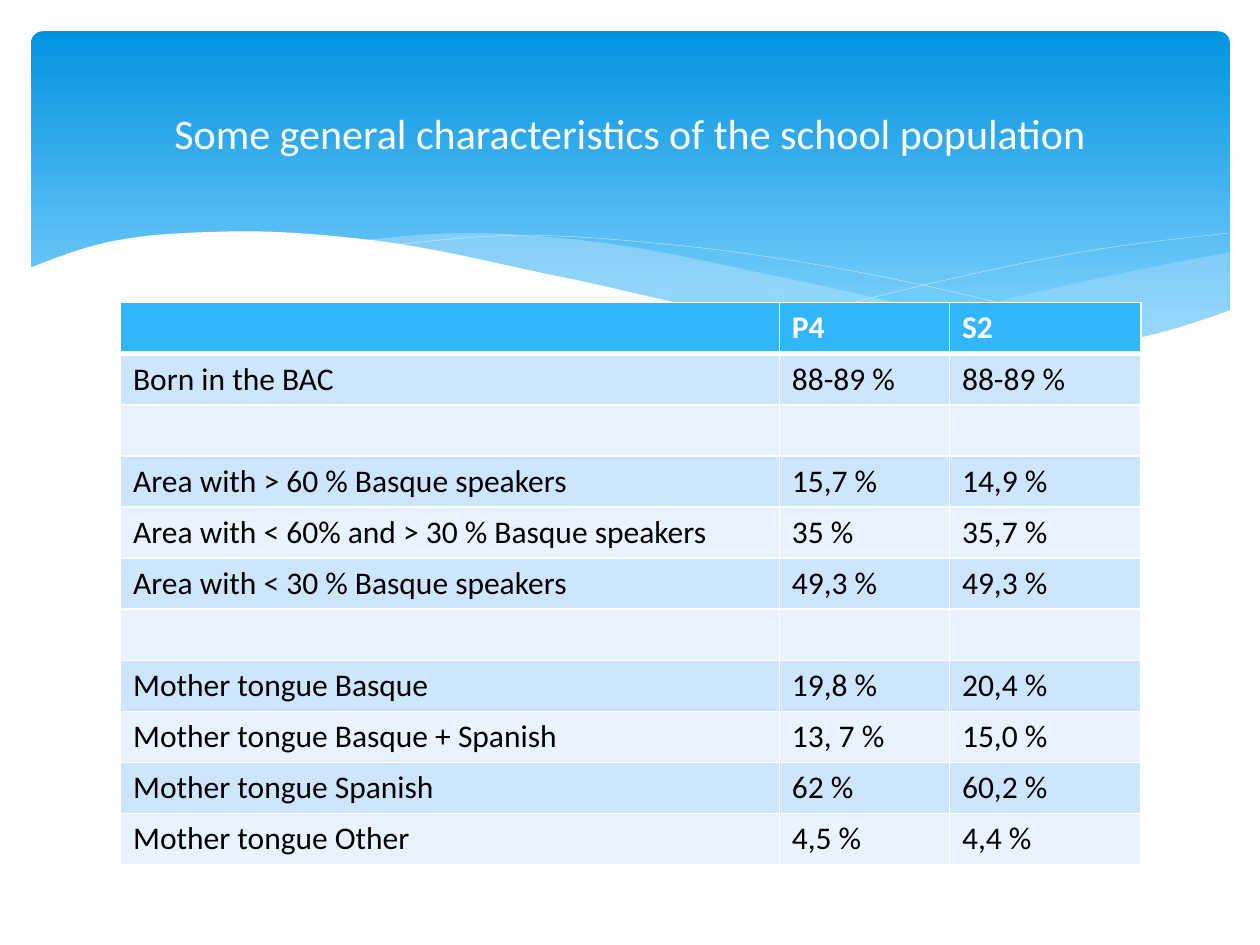
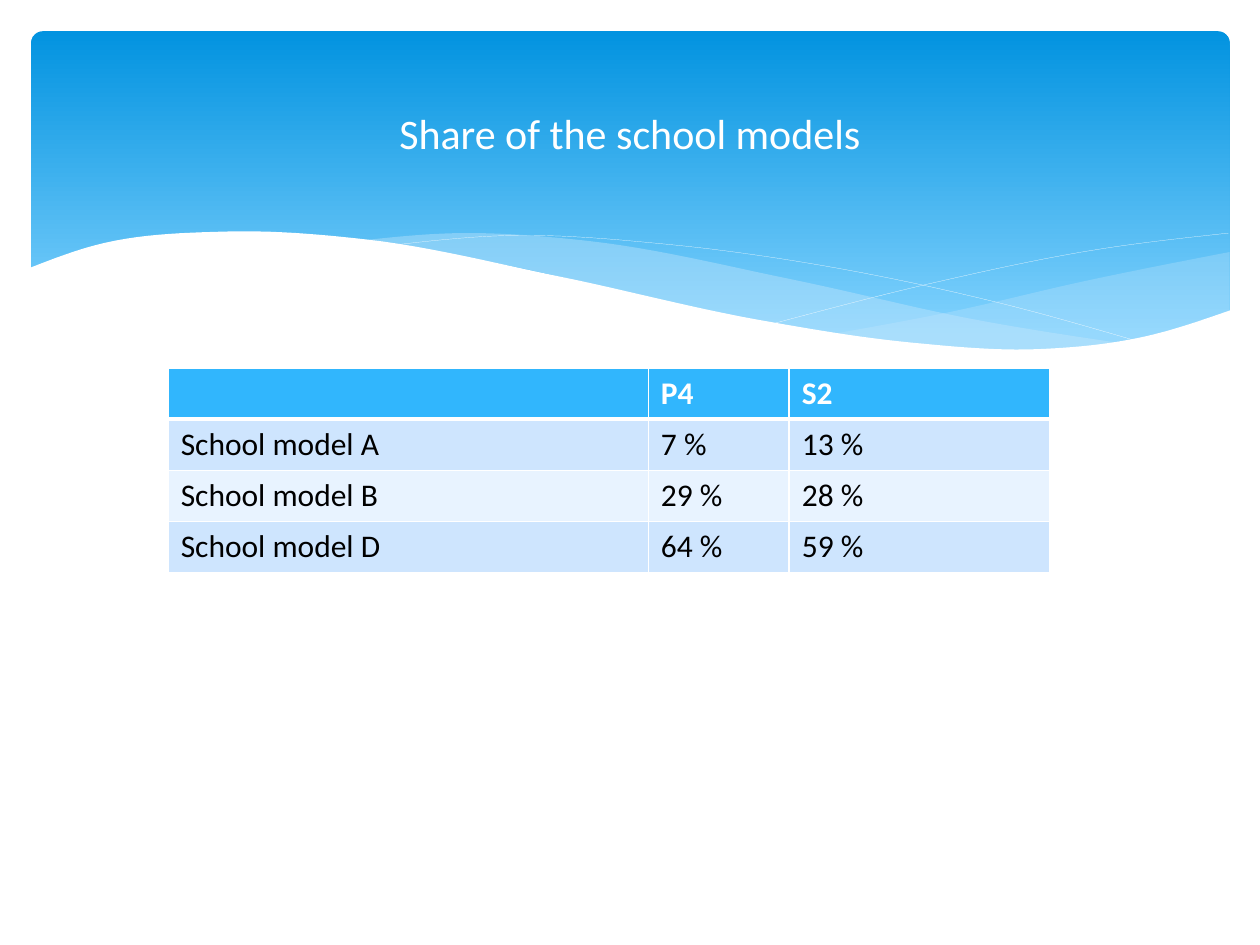
from lxml import etree
from pptx import Presentation
from pptx.dml.color import RGBColor
from pptx.enum.shapes import MSO_SHAPE
from pptx.enum.text import MSO_ANCHOR, PP_ALIGN
from pptx.oxml.ns import qn
from pptx.util import Cm, Pt

ROUNDED = MSO_SHAPE.ROUNDED_RECTANGLE
MIDDLE = MSO_ANCHOR.MIDDLE
CENTER = PP_ALIGN.CENTER

FONT = "Calibri"
COLORS = {
    "band_top": "0293E0",
    "band_bottom": "83D3FE",
    "wave": "C6E7FC",
    "white": "FFFFFF",
    "black": "000000",
    "header": "31B6FD",
    "odd_row": "CEE5FE",
    "even_row": "E8F3FF",
}
ROW_HEIGHT = Cm(1.03)
THIN_BORDER, THICK_BORDER, HAIRLINE = Pt(1), Pt(3), Pt(0.1)
STEPS_PER_SPAN = 12

WAVES = [
    {
        "upper": [(16.8, 6.73), (19.1, 6.3), (21.9, 5.66), (24.79, 5.08)],
        "lower": [(16.8, 6.73), (18.6, 6.96), (20.7, 7.06), (22.8, 6.86), (24.79, 6.27)],
        "color": "wave",
        "opacity": 29,
    },
    {
        "upper": [(7.26, 4.85), (9.2, 4.7), (11.8, 4.85), (16, 5.64), (19.7, 6.45), (22.68, 6.93)],
        "lower": [(7.26, 4.85), (10.3, 5.36), (13.5, 6.1), (16.9, 6.76), (20.2, 7.06), (22.68, 6.93)],
        "color": "wave",
        "opacity": 40,
    },
    {
        "upper": [(0.58, 5.41), (1.9, 4.95), (4.5, 4.67), (7.4, 4.83), (11.3, 5.58),
                  (15.3, 6.45), (18.4, 6.91), (20.9, 7.04), (23.1, 6.78), (24.82, 6.25)],
        "lower": [(0.58, 8.36), (24.82, 8.36)],
        "color": "white",
        "opacity": 100,
    },
]
FALLING_LINE = [(7.85, 4.95), (10.2, 4.75), (13.5, 4.93), (16.9, 5.41), (20.2, 6.12), (23.04, 6.91)]
RISING_LINE = [(15.57, 6.53), (19, 5.66), (22, 5.05), (24.77, 4.7)]
LIGHT_WAVES, WHITE_WAVE = WAVES[:2], WAVES[2]
WAVE_LAYERS = [*LIGHT_WAVES, {"upper": FALLING_LINE}, {"upper": RISING_LINE}, WHITE_WAVE]

SLIDES = [
    {
        "title": "Some general characteristics of the school population",
        "position": (2.43, 6.1),
        "columns": (13.28, 3.43, 3.86),
        "rows": [
            ("", "P4", "S2"),
            ("Born in the BAC", "88-89 %", "88-89 %"),
            ("", "", ""),
            ("Area with > 60 % Basque speakers", "15,7 %", "14,9 %"),
            ("Area with < 60% and > 30 % Basque speakers", "35 %", "35,7 %"),
            ("Area with < 30 % Basque speakers", "49,3 %", "49,3 %"),
            ("", "", ""),
            ("Mother tongue Basque", "19,8 %", "20,4 %"),
            ("Mother tongue Basque + Spanish", "13, 7 %", "15,0 %"),
            ("Mother tongue Spanish", "62 %", "60,2 %"),
            ("Mother tongue Other", "4,5 %", "4,4 %"),
        ],
    },
    {
        "title": "Share of the school models",
        "position": (3.39, 7.42),
        "columns": (9.68, 2.84, 5.26),
        "rows": [
            ("", "P4", "S2"),
            ("School model A", "7 %", "13 %"),
            ("School model B", "29 %", "28 %"),
            ("School model D", "64 %", "59 %"),
        ],
    },
]


def smooth_curve(knots):
    spans = list(zip(knots, knots[1:]))
    widths = [end[0] - start[0] for start, end in spans]
    secants = [(end[1] - start[1]) / width for (start, end), width in zip(spans, widths)]
    slopes = [
        (secants[i] * widths[i + 1] + secants[i + 1] * widths[i]) / (widths[i] + widths[i + 1])
        for i in range(len(spans) - 1)
    ]
    if slopes:
        first_slope = 1.5 * secants[0] - 0.5 * slopes[0]
        last_slope = 1.5 * secants[-1] - 0.5 * slopes[-1]
        slopes = [first_slope, *slopes, last_slope]
    else:
        slopes = secants * 2

    points = [knots[0]]
    for i, ((x, y), (next_x, next_y)) in enumerate(spans):
        for step in range(1, STEPS_PER_SPAN + 1):
            t = step / STEPS_PER_SPAN
            blend = t * t * (3 - 2 * t)
            bend = slopes[i] * t * (1 - t) ** 2 - slopes[i + 1] * t * t * (1 - t)
            points.append((x + (next_x - x) * t, y + (next_y - y) * blend + widths[i] * bend))
    return [(Cm(x), Cm(y)) for x, y in points]


def set_font(paragraph, size, color, bold=False):
    paragraph.font.name = FONT
    paragraph.font.size = Pt(size)
    paragraph.font.bold = bold
    paragraph.font.color.rgb = RGBColor.from_string(COLORS[color])


presentation = Presentation()
presentation.slide_width = Cm(25.4)
presentation.slide_height = Cm(19.05)
title_only = presentation.slide_layouts[5]

for content in SLIDES:
    slide = presentation.slides.add_slide(title_only)
    shapes = slide.shapes

    band = shapes.add_shape(ROUNDED, Cm(0.63), Cm(0.63), Cm(24.16), Cm(6.86))
    band.adjustments[0] = 0.034
    band.shadow.inherit = False
    band.line.fill.background()
    band.fill.gradient()
    band.fill.gradient_angle = 270
    for stop, position, color in zip(band.fill.gradient_stops, (0, 0.9), ("band_top", "band_bottom")):
        stop.position = position
        stop.color.rgb = RGBColor.from_string(COLORS[color])

    for layer in WAVE_LAYERS:
        is_filled = "lower" in layer
        outline = smooth_curve(layer["upper"])
        if is_filled:
            outline += reversed(smooth_curve(layer["lower"]))
        builder = shapes.build_freeform(*outline[0])
        builder.add_line_segments(outline[1:], close=is_filled)
        wave = builder.convert_to_shape()
        wave.shadow.inherit = False
        if is_filled:
            wave.line.fill.background()
            wave.fill.solid()
            wave.fill.fore_color.rgb = RGBColor.from_string(COLORS[layer["color"]])
            fill_color = wave.element.spPr.find(qn("a:solidFill")).find(qn("a:srgbClr"))
            etree.SubElement(fill_color, qn("a:alpha"), val=str(layer["opacity"] * 1000))
        else:
            wave.fill.background()
            wave.line.color.rgb = RGBColor.from_string(COLORS["white"])
            wave.line.width = HAIRLINE

    rows, columns = content["rows"], content["columns"]
    left, top = content["position"]
    table = shapes.add_table(
        len(rows), len(columns), Cm(left), Cm(top), Cm(sum(columns)), ROW_HEIGHT * len(rows)
    ).table
    for column, width in zip(table.columns, columns):
        column.width = Cm(width)
    for row_index, texts in enumerate(rows):
        table.rows[row_index].height = ROW_HEIGHT
        is_header = row_index == 0
        row_color = "header" if is_header else "odd_row" if row_index % 2 else "even_row"
        thick_side = {0: "B", 1: "T"}.get(row_index)
        for column_index, text in enumerate(texts):
            cell = table.cell(row_index, column_index)
            cell_properties = cell._tc.get_or_add_tcPr()
            for side in "LRTB":
                border_width = THICK_BORDER if side == thick_side else THIN_BORDER
                border = etree.SubElement(cell_properties, qn(f"a:ln{side}"), w=str(border_width))
                border_fill = etree.SubElement(border, qn("a:solidFill"))
                etree.SubElement(border_fill, qn("a:srgbClr"), val=COLORS["white"])
            cell.fill.solid()
            cell.fill.fore_color.rgb = RGBColor.from_string(COLORS[row_color])
            cell.text = text
            set_font(cell.text_frame.paragraphs[0], 18, "white" if is_header else "black", is_header)

    title = shapes.title
    title.left, title.top, title.width, title.height = Cm(1.27), Cm(0.94), Cm(22.86), Cm(3.48)
    title.text_frame.text = content["title"]
    title.text_frame.word_wrap = True
    title.text_frame.vertical_anchor = MIDDLE
    title_paragraph = title.text_frame.paragraphs[0]
    title_paragraph.alignment = CENTER
    set_font(title_paragraph, 24, "white")
    title.element.getparent().append(title.element)

presentation.save("out.pptx")
